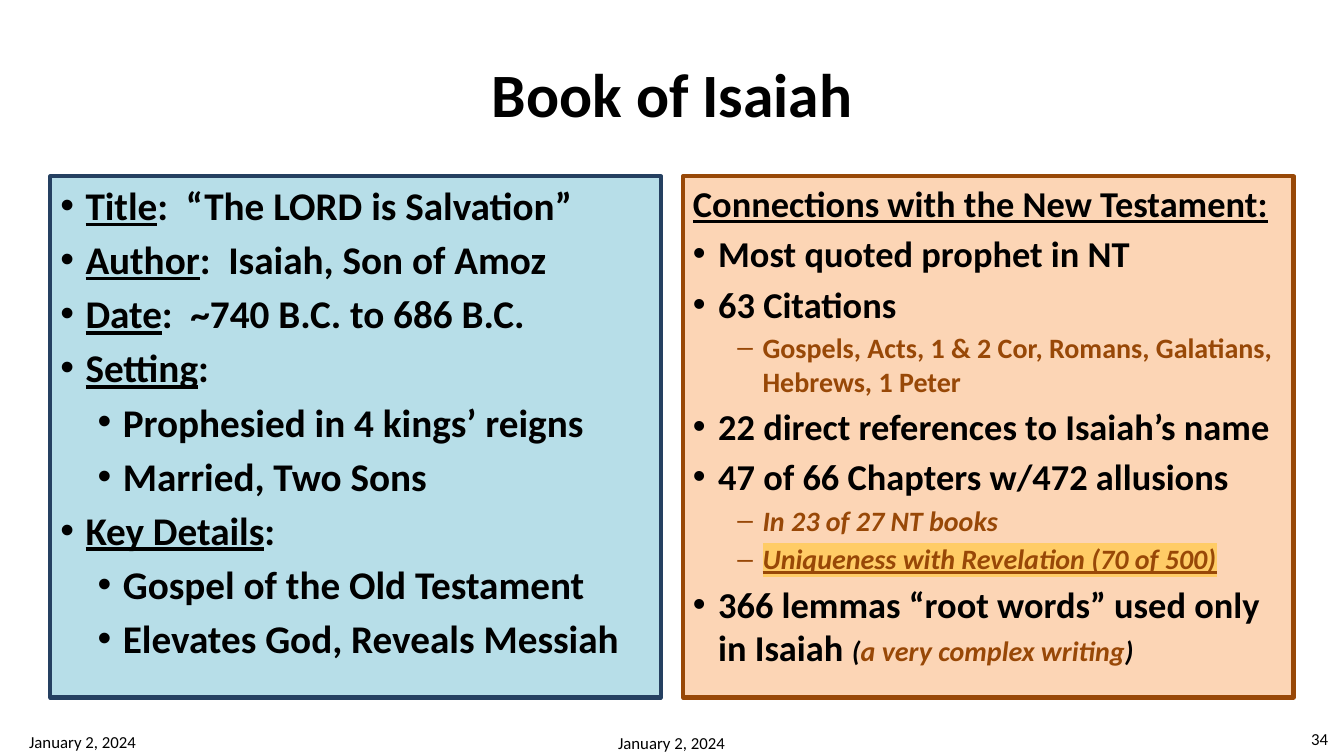
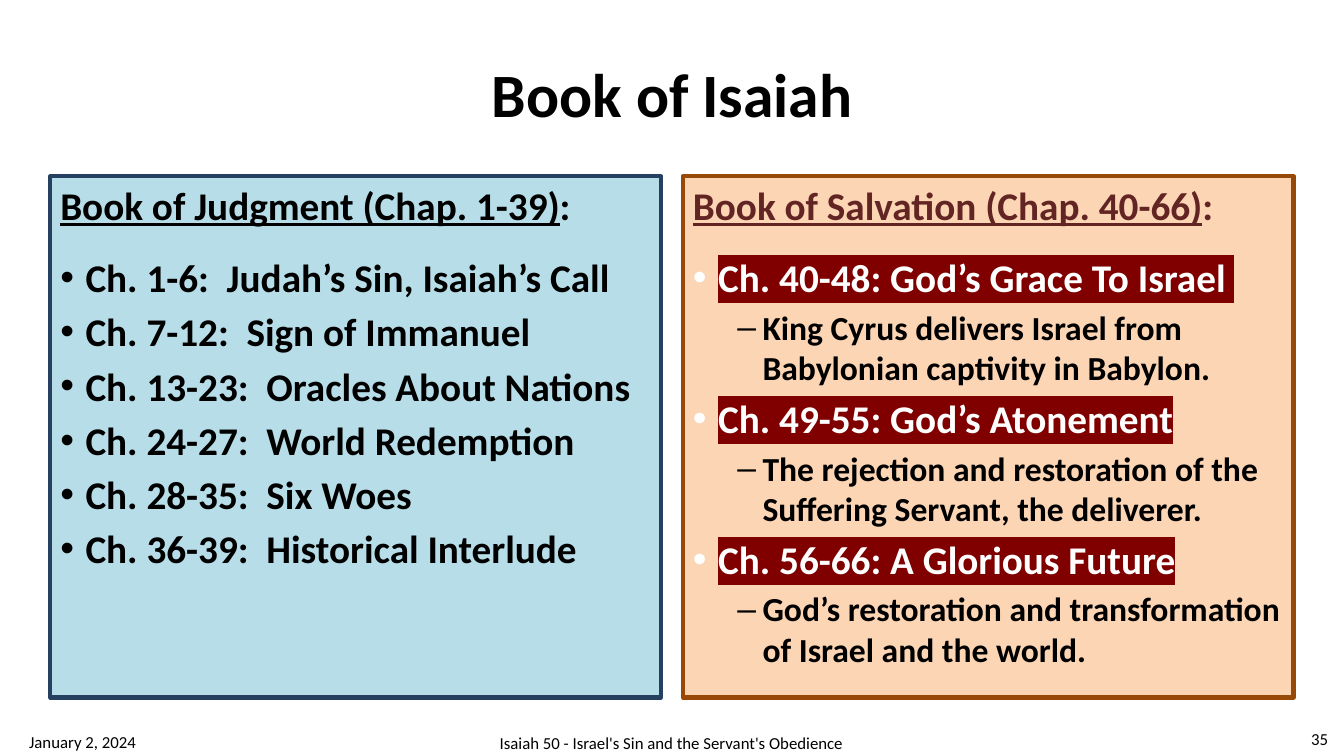
from dataclasses import dataclass, replace

from lxml import etree
from pptx import Presentation
from pptx.dml.color import RGBColor
from pptx.enum.shapes import MSO_SHAPE
from pptx.enum.text import MSO_ANCHOR, PP_ALIGN
from pptx.oxml.ns import qn
from pptx.util import Inches, Pt

RECT = MSO_SHAPE.RECTANGLE
TOP, MID = MSO_ANCHOR.TOP, MSO_ANCHOR.MIDDLE
LEFT, CENTER, RIGHT = PP_ALIGN.LEFT, PP_ALIGN.CENTER, PP_ALIGN.RIGHT


class Theme:
    font = "Calibri"
    black, white = "000000", "FFFFFF"
    blue, navy = "B7DEE8", "254061"
    peach, brown = "FCD5B5", "984807"
    wine, red, gold = "632523", "800000", "FFCC66"
    title, large, mid, sub, small, foot = 44, 28, 26, 24, 20, 12
    edge = 3
    lead = 0.18  # space before a paragraph, as a share of its type size
    gap = 18  # space between a heading and its list


WIDE, HIGH = 13.33, 7.5
MARGIN, GUTTER = 0.5, 0.22
PANEL_TOP, PANEL_HIGH = 1.75, 5.17
PANEL_WIDE = (WIDE - 2 * MARGIN - GUTTER) / 2


@dataclass(frozen=True)
class Look:
    size: int = Theme.large
    color: str = Theme.black
    bold: bool = True
    italic: bool = False
    line: bool = False
    mark: str = ""


@dataclass(frozen=True)
class Kind:
    level: int = 0
    indent: float = 0
    bullet: str = ""
    before: float = 0


HEAD = Kind()
DOT = Kind(0, 0.25, "•")
FIRST = replace(DOT, before=Theme.gap)
SUB = Kind(1, 0.62, "•")
DASH = Kind(1, 0.69, "–")
HANG = 0.25

BIG = Look()
KEY = replace(BIG, line=True)
SAVED = replace(KEY, color=Theme.wine)
BAND = replace(BIG, color=Theme.white, mark=Theme.red)
NOTE = Look(Theme.sub)
MED = Look(Theme.mid)
CAP = replace(MED, line=True)
FINE = Look(Theme.small, Theme.brown)
SLANT = replace(FINE, italic=True)
GLOW = replace(SLANT, line=True, mark=Theme.gold)
PAREN = replace(SLANT, color=Theme.black)
TITLE = Look(Theme.title)
FOOT = Look(Theme.foot, bold=False)


def rgb(code):
    return RGBColor.from_string(code)


def add_run(para, text, look):
    run = para.add_run()
    run.text = text
    font = run.font
    font.size, font.bold = Pt(look.size), look.bold
    font.italic, font.underline = look.italic, look.line
    font.color.rgb = rgb(look.color)
    if look.mark:
        mark = etree.SubElement(run._r.get_or_add_rPr(), qn("a:highlight"))
        etree.SubElement(mark, qn("a:srgbClr"), val=look.mark)
    font.name = Theme.font


def set_kind(para, kind):
    """Give a paragraph its level, hanging indent and bullet."""
    para.level = kind.level
    if kind.bullet:
        props = para._p.get_or_add_pPr()
        props.set("marL", str(Inches(kind.indent)))
        props.set("indent", str(-Inches(HANG)))
        etree.SubElement(props, qn("a:buFont"), typeface="Arial")
        etree.SubElement(props, qn("a:buChar"), char=kind.bullet)


def fill_text(shape, paras, anchor=TOP, align=LEFT):
    """Write (kind, (text, look), ...) paragraphs into a shape."""
    frame = shape.text_frame
    frame.word_wrap, frame.vertical_anchor = True, anchor
    for i, (kind, *runs) in enumerate(paras):
        para = frame.add_paragraph() if i else frame.paragraphs[0]
        set_kind(para, kind)
        para.alignment = align
        if i:
            size = runs[0][1].size
            para.space_before = Pt(kind.before or size * Theme.lead)
        for text, look in runs:
            add_run(para, text, look)


def add_label(slide, box, text, look, align):
    label = slide.shapes.add_textbox(*map(Inches, box))
    fill_text(label, [(HEAD, (text, look))], MID, align)


def add_panel(slide, col, fill, edge, paras):
    left = MARGIN + col * (PANEL_WIDE + GUTTER)
    box = left, PANEL_TOP, PANEL_WIDE, PANEL_HIGH
    panel = slide.shapes.add_shape(RECT, *map(Inches, box))
    panel.shadow.inherit = False
    panel.fill.solid()
    panel.fill.fore_color.rgb = rgb(fill)
    panel.line.color.rgb = rgb(edge)
    panel.line.width = Pt(Theme.edge)
    fill_text(panel, paras)


def add_footer(slide, topic, number):
    parts = [
        ((0.19, 7.16, 2.29, 0.4), "January 2, 2024", LEFT),
        ((2.05, 7.17, 9.22, 0.4), topic, CENTER),
        ((12.27, 7.13, 1, 0.4), number, RIGHT),
    ]
    for box, text, align in parts:
        add_label(slide, box, text, FOOT, align)


def add_page(deck, topic, number, left, right):
    slide = deck.slides.add_slide(deck.slide_layouts[6])
    add_label(slide, (0.67, 0.3, 12, 1.25), "Book of Isaiah", TITLE, CENTER)
    add_panel(slide, 0, Theme.blue, Theme.navy, left)
    add_panel(slide, 1, Theme.peach, Theme.brown, right)
    add_footer(slide, topic, number)


FACTS = [
    (DOT, ("Title", KEY), (":  “The LORD is Salvation”", BIG)),
    (DOT, ("Author", KEY), (":  Isaiah, Son of Amoz", BIG)),
    (DOT, ("Date", KEY), (":  ~740 B.C. to 686 B.C.", BIG)),
    (DOT, ("Setting", KEY), (":", BIG)),
    (SUB, ("Prophesied in 4 kings’ reigns", BIG)),
    (SUB, ("Married, Two Sons", BIG)),
    (DOT, ("Key Details", KEY), (":", BIG)),
    (SUB, ("Gospel of the Old Testament", BIG)),
    (SUB, ("Elevates God, Reveals Messiah", BIG)),
]
LINKS = [
    (HEAD, ("Connections with the New Testament:", CAP)),
    (DOT, ("Most quoted prophet in NT", MED)),
    (DOT, ("63 Citations", MED)),
    (DASH, ("Gospels, Acts, 1 & 2 Cor, Romans, Galatians, "
            "Hebrews, 1 Peter", FINE)),
    (DOT, ("22 direct references to Isaiah’s name", MED)),
    (DOT, ("47 of 66 Chapters w/472 allusions", MED)),
    (DASH, ("In 23 of 27 NT books", SLANT)),
    (DASH, ("Uniqueness with Revelation (70 of 500)", GLOW)),
    (DOT, ("366 lemmas “root words” used only in Isaiah ", MED),
     ("(", PAREN), ("a very complex writing", SLANT), (")", PAREN)),
]
JUDGED = [
    (HEAD, ("Book of Judgment (Chap. 1-39)", KEY), (":", BIG)),
    (FIRST, ("Ch. 1-6:  Judah’s Sin, Isaiah’s Call", BIG)),
    (DOT, ("Ch. 7-12:  Sign of Immanuel", BIG)),
    (DOT, ("Ch. 13-23:  Oracles About Nations", BIG)),
    (DOT, ("Ch. 24-27:  World Redemption", BIG)),
    (DOT, ("Ch. 28-35:  Six Woes", BIG)),
    (DOT, ("Ch. 36-39:  Historical Interlude", BIG)),
]
RESCUED = [
    (HEAD, ("Book of Salvation (Chap. 40-66)", SAVED),
     (":", replace(SAVED, line=False))),
    (FIRST, ("Ch. 40-48: God’s Grace To Israel ", BAND)),
    (DASH, ("King Cyrus delivers Israel from Babylonian captivity "
            "in Babylon.", NOTE)),
    (DOT, ("Ch. 49-55: God’s Atonement", BAND)),
    (DASH, ("The rejection and restoration of the Suffering Servant, "
            "the deliverer.", NOTE)),
    (DOT, ("Ch. 56-66: A Glorious Future", BAND)),
    (DASH, ("God’s restoration and transformation of Israel "
            "and the world.", NOTE)),
]


def main():
    deck = Presentation()
    deck.slide_width, deck.slide_height = Inches(WIDE), Inches(HIGH)
    add_page(deck, "January 2, 2024", "34", FACTS, LINKS)
    add_page(deck, "Isaiah 50 - Israel's Sin and the Servant's Obedience",
             "35", JUDGED, RESCUED)
    deck.save("out.pptx")


if __name__ == "__main__":
    main()
